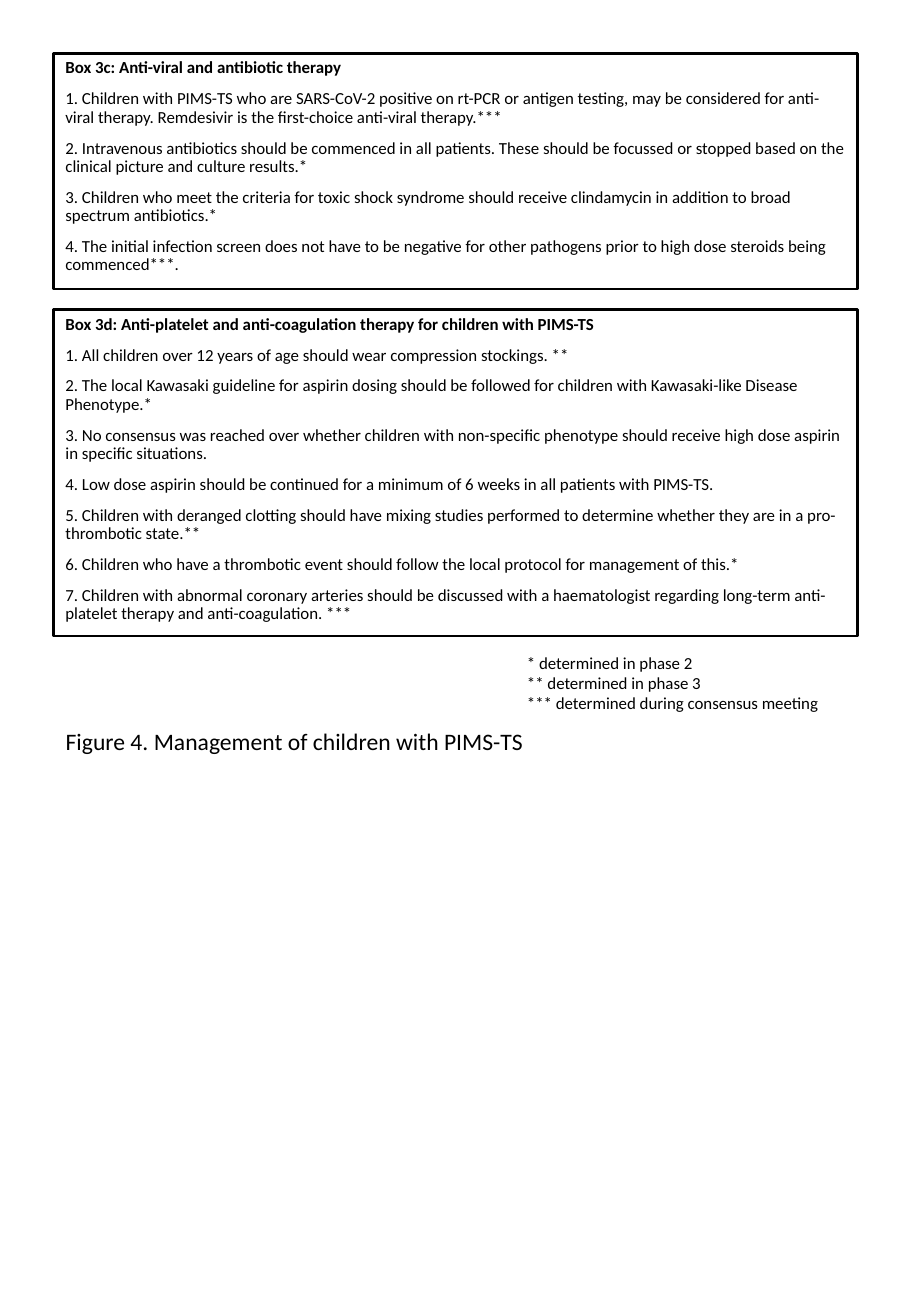
from dataclasses import dataclass
from pptx import Presentation
from pptx import util as u
from pptx.dml.color import RGBColor
from pptx.enum import shapes, text

CAPTION = "Figure 4. Management of children with PIMS-TS"
BOXES = [
    (1.94, "Box 3c: Anti-viral and antibiotic therapy", [
        "Children with PIMS-TS who are SARS-CoV-2 positive on rt-PCR or antigen testing, may be considered for anti-viral therapy. Remdesivir is the first-choice anti-viral therapy.***",
        "Intravenous antibiotics should be commenced in all patients. These should be focussed or stopped based on the clinical picture and culture results.*",
        "Children who meet the criteria for toxic shock syndrome should receive clindamycin in addition to broad spectrum antibiotics.*",
        "The initial infection screen does not have to be negative for other pathogens prior to high dose steroids being commenced***.",
    ]),
    (2.69, "Box 3d: Anti-platelet and anti-coagulation therapy for children with PIMS-TS", [
        "All children over 12 years of age should wear compression stockings. **",
        "The local Kawasaki guideline for aspirin dosing should be followed for children with Kawasaki-like Disease Phenotype.*",
        "No consensus was reached over whether children with non-specific phenotype should receive high dose aspirin in specific situations.",
        "Low dose aspirin should be continued for a minimum of 6 weeks in all patients with PIMS-TS.",
        "Children with deranged clotting should have mixing studies performed to determine whether they are in a pro-thrombotic state.**",
        "Children who have a thrombotic event should follow the local protocol for management of this.*",
        "Children with abnormal coronary arteries should be discussed with a haematologist regarding long-term anti-platelet therapy and anti-coagulation. ***",
    ]),
]
KEY = [
    "* determined in phase 2",
    "** determined in phase 3",
    "*** determined during consensus meeting",
]


@dataclass(frozen=True)
class Theme:
    font: str = "Calibri"
    ink: RGBColor = RGBColor(0, 0, 0)
    body: int = 10
    caption: int = 14
    border: float = 1.5
    leading: float = 0.9
    before: float = 7.5


THEME = Theme()
WIDTH, HEIGHT = 7.5, 10.84
MARGIN = 0.44
GAP = 0.17
KEY_LEFT, KEY_WIDTH, KEY_HEIGHT = 4.24, 2.64, 0.61
CAPTION_WIDTH, CAPTION_HEIGHT = 4.09, 0.34


def write(tf, lines, size, wrap=True):
    tf.word_wrap = wrap
    tf.auto_size = text.MSO_AUTO_SIZE.NONE
    tf.vertical_anchor = text.MSO_ANCHOR.TOP
    for i, line in enumerate(lines):
        p = tf.add_paragraph() if i else tf.paragraphs[0]
        p.text = line
        p.alignment = text.PP_ALIGN.LEFT
        p.font.name = THEME.font
        p.font.size = u.Pt(size)
        p.font.color.rgb = THEME.ink
    return tf.paragraphs


def add_box(s, top, height, heading, items):
    sp = s.shapes.add_shape(
        shapes.MSO_SHAPE.RECTANGLE, u.Inches(MARGIN), u.Inches(top),
        u.Inches(WIDTH - 2 * MARGIN), u.Inches(height))
    sp.shadow.inherit = False
    sp.fill.background()
    sp.line.color.rgb = THEME.ink
    sp.line.width = u.Pt(THEME.border)
    numbered = [f"{n}. {item}" for n, item in enumerate(items, 1)]
    paragraphs = write(sp.text_frame, [heading] + numbered, THEME.body)
    for p in paragraphs:
        p.line_spacing = THEME.leading
        p.space_before = u.Pt(THEME.before)
    paragraphs[0].font.bold = True


def main():
    prs = Presentation()
    prs.slide_width, prs.slide_height = u.Inches(WIDTH), u.Inches(HEIGHT)
    s = prs.slides.add_slide(prs.slide_layouts[5])

    top = MARGIN
    for height, heading, items in BOXES:
        add_box(s, top, height, heading, items)
        top += height + GAP

    top -= GAP / 2
    key = s.shapes.add_textbox(
        u.Inches(KEY_LEFT), u.Inches(top), u.Inches(KEY_WIDTH), u.Inches(KEY_HEIGHT))
    write(key.text_frame, KEY, THEME.body, wrap=False)

    title = s.shapes.title
    title.left, title.top = u.Inches(MARGIN), u.Inches(top + KEY_HEIGHT)
    title.width, title.height = u.Inches(CAPTION_WIDTH), u.Inches(CAPTION_HEIGHT)
    write(title.text_frame, [CAPTION], THEME.caption, wrap=False)

    prs.save("out.pptx")


if __name__ == "__main__":
    main()
